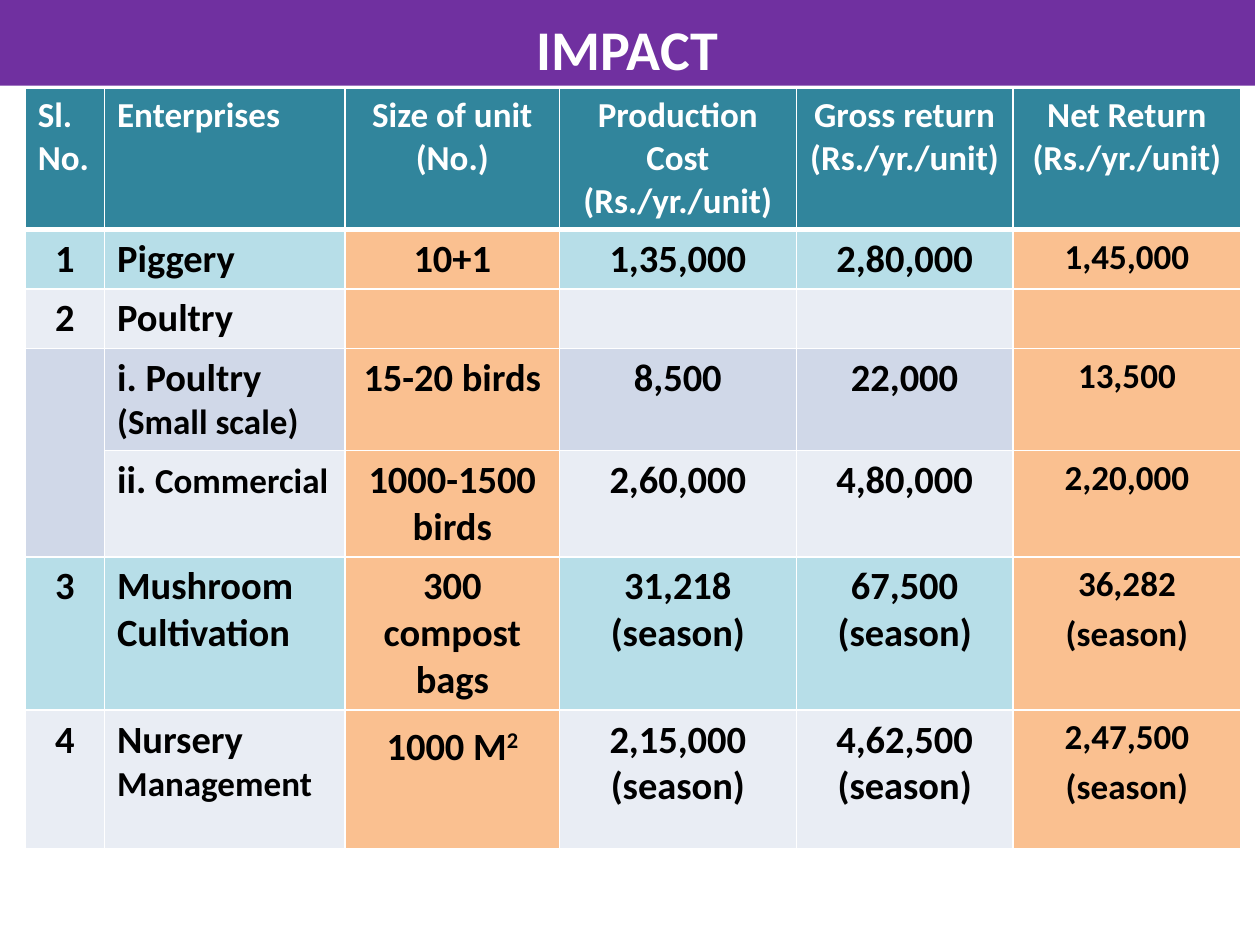
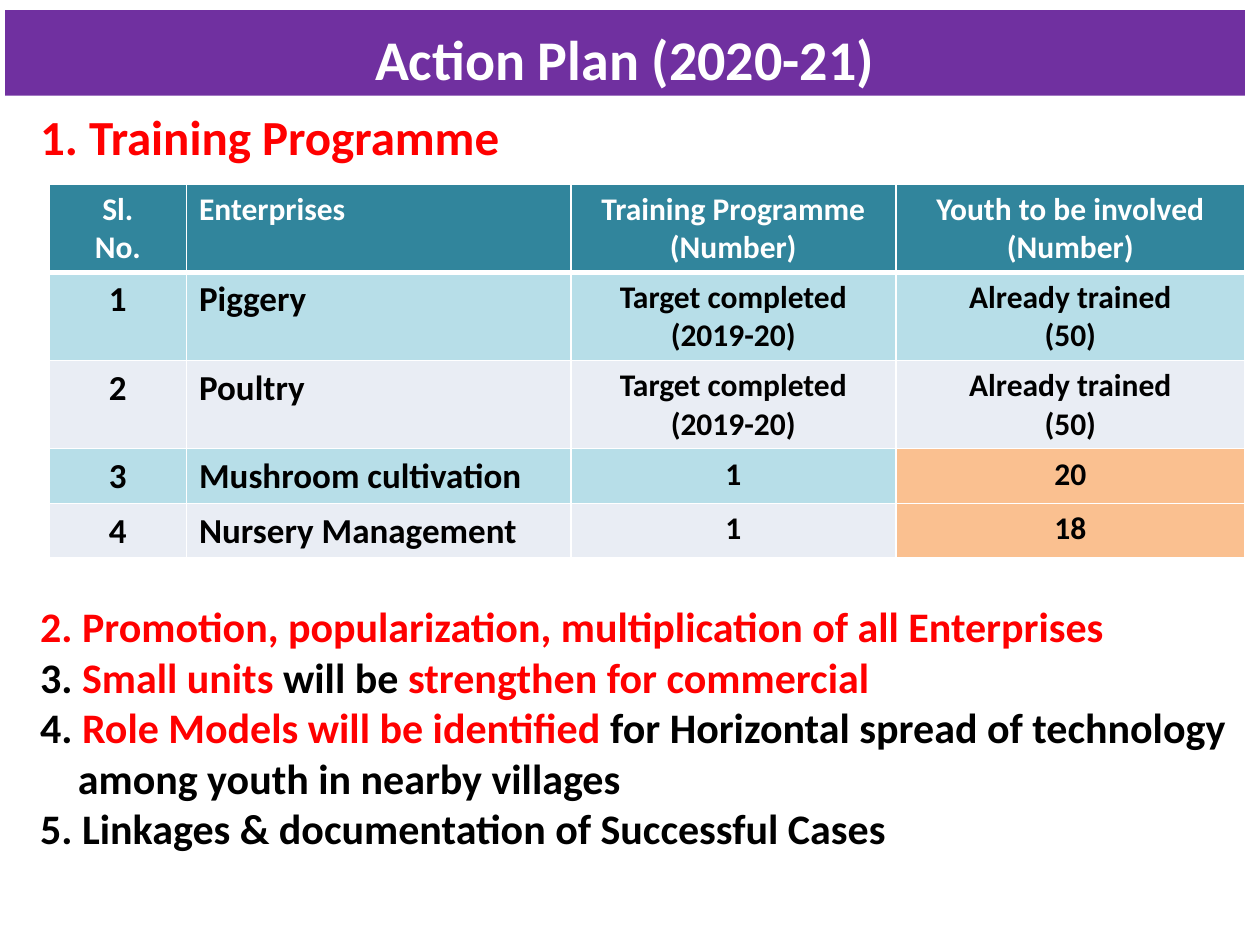
from dataclasses import dataclass
from typing import NamedTuple

from lxml import etree
from pptx import Presentation
from pptx.dml.color import RGBColor
from pptx.enum.shapes import MSO_SHAPE
from pptx.enum.text import MSO_AUTO_SIZE, PP_ALIGN
from pptx.oxml.ns import qn
from pptx.util import Inches, Pt

RECTANGLE = MSO_SHAPE.RECTANGLE
LEFT, CENTER = PP_ALIGN.LEFT, PP_ALIGN.CENTER
GROW = MSO_AUTO_SIZE.SHAPE_TO_FIT_TEXT
GRID_COLUMNS, GRID_ROWS = 100, 75
UNIT = 0.1  # inches per grid step, the same across and down


@dataclass(frozen=True)
class Theme:
    font: str = "Calibri"
    white: str = "FFFFFF"
    black: str = "000000"
    red: str = "FF0000"
    purple: str = "7030A0"
    teal: str = "31859C"
    aqua: str = "B7DEE8"
    pale: str = "E9EDF4"
    mist: str = "D0D8E8"
    orange: str = "FAC090"
    title: int = 32
    heading: int = 28
    points: int = 24
    large: int = 22
    medium: int = 20
    small: int = 18
    loose: float = 1.15
    thin: int = 1
    thick: int = 3


THEME = Theme()


class Area(NamedTuple):
    """Left, top, width and height in grid steps."""
    left: float
    top: float
    width: float
    height: float


class Span(NamedTuple):
    text: str
    size: int | None = None
    color: str | None = None
    raised: bool = False


class RichCell(NamedTuple):
    spans: list[Span]
    spacing: float | None = None


@dataclass(frozen=True)
class Column:
    width: float
    header: str
    size: int
    align: PP_ALIGN = CENTER
    header_align: PP_ALIGN = CENTER
    spacing: float | None = None
    margins: tuple[float, float] = (1, 0.5)
    accent_from: int | None = None


@dataclass(frozen=True)
class Row:
    height: float
    fill: str
    cells: list[str | RichCell]


class Point(NamedTuple):
    spans: list[Span]
    continues: bool = False


def steps(value: float) -> int:
    return Inches(value * UNIT)


def place(area: Area) -> list[int]:
    return [steps(value) for value in area]


def write_line(para, text: str | list[Span], *, size: int, color: str,
               align=LEFT, spacing: float | None = None,
               hanging: tuple[float, float] | None = None) -> None:
    """Write one paragraph; hanging is its left margin and first-line shift."""
    para.alignment = align
    if spacing:
        para.line_spacing = spacing
    if hanging:
        properties = para._p.get_or_add_pPr()
        for name, value in zip(("marL", "indent"), hanging):
            properties.set(name, str(steps(value)))
    for part in [Span(text)] if isinstance(text, str) else text:
        span = para.add_run()
        span.text = part.text
        span.font.name = THEME.font
        span.font.bold = True
        span.font.size = Pt(part.size or size)
        span.font.color.rgb = RGBColor.from_string(part.color or color)
        if part.raised:
            span._r.get_or_add_rPr().set("baseline", "30000")


def next_para(frame, index: int):
    return frame.add_paragraph() if index else frame.paragraphs[0]


def add_banner(page, area: Area, title: str) -> None:
    box = page.shapes.add_shape(RECTANGLE, *place(area))
    box.shadow.inherit = False
    box.fill.solid()
    box.fill.fore_color.rgb = RGBColor.from_string(THEME.purple)
    box.line.fill.background()
    box.text_frame.word_wrap = True
    box.text_frame.auto_size = GROW
    write_line(box.text_frame.paragraphs[0], title, size=THEME.title,
               color=THEME.white, align=CENTER, spacing=THEME.loose)


def add_points(page, area: Area, points: list[Point], size: int) -> None:
    box = page.shapes.add_textbox(*place(area))
    frame = box.text_frame
    frame.word_wrap = True
    frame.auto_size = GROW
    for index, point in enumerate(points):
        hanging = (11.3, -2.6) if point.continues else (11.3, -5.6)
        write_line(next_para(frame, index), point.spans, size=size,
                   color=THEME.black, hanging=hanging)


def draw_borders(cell, bottom: int) -> None:
    properties = cell._tc.get_or_add_tcPr()
    for side, width in zip("LRTB", (THEME.thin,) * 3 + (bottom,)):
        line = etree.SubElement(properties, qn(f"a:ln{side}"), w=str(Pt(width)))
        fill = etree.SubElement(line, qn("a:solidFill"))
        etree.SubElement(fill, qn("a:srgbClr"), val=THEME.white)


def paint_cell(cell, fill: str, bottom: int = THEME.thin) -> None:
    draw_borders(cell, bottom)
    cell.fill.solid()
    cell.fill.fore_color.rgb = RGBColor.from_string(fill)


def fill_cell(cell, content: str | RichCell, column: Column) -> None:
    across, down = map(steps, column.margins)
    cell.margin_left = cell.margin_right = across
    cell.margin_top = cell.margin_bottom = down
    if isinstance(content, RichCell):
        lines, spacing = [content.spans], content.spacing
    else:
        lines, spacing = content.split("\n"), column.spacing
    for index, line in enumerate(lines):
        if line:
            write_line(next_para(cell.text_frame, index), line,
                       size=column.size, color=THEME.black,
                       align=column.align, spacing=spacing)


def add_grid(page, area: Area, columns: list[Column], rows: list[Row],
             header_height: float, header_size: int):
    holder = page.shapes.add_table(len(rows) + 1, len(columns), *place(area))
    table = holder.table
    table.first_row = table.horz_banding = False
    table.rows[0].height = steps(header_height)
    for across, column in enumerate(columns):
        table.columns[across].width = steps(column.width)
        cell = table.cell(0, across)
        paint_cell(cell, THEME.teal, THEME.thick)
        for index, line in enumerate(column.header.split("\n")):
            write_line(next_para(cell.text_frame, index), line,
                       size=header_size, color=THEME.white,
                       align=column.header_align)
    for down, row in enumerate(rows, start=1):
        table.rows[down].height = steps(row.height)
        for across, (column, content) in enumerate(zip(columns, row.cells)):
            accented = column.accent_from and down >= column.accent_from
            cell = table.cell(down, across)
            paint_cell(cell, THEME.orange if accented else row.fill)
            fill_cell(cell, content, column)
    holder.height = steps(area.height)
    return table


def build_impact(page) -> None:
    large, medium = THEME.large, THEME.medium
    columns = [
        Column(6.3, "Sl.\nNo.", large, header_align=LEFT),
        Column(19.1, "Enterprises", large, LEFT, LEFT),
        Column(17, "Size of unit (No.)", large, accent_from=1),
        Column(18.8, "Production Cost (Rs./yr./unit)", large),
        Column(17.2, "Gross return (Rs./yr./unit)", large),
        Column(18.1, "Net Return (Rs./yr./unit)", medium,
               spacing=THEME.loose, margins=(0.7, 0), accent_from=1),
    ]
    small_scale = RichCell([Span("i. Poultry "), Span("(Small scale)", medium)])
    commercial = RichCell([Span("ii. "), Span("Commercial", medium)])
    nursery = RichCell([Span("Nursery "), Span("Management", medium)])
    nursery_size = RichCell([Span("1000 M"), Span("2", raised=True)], THEME.loose)
    rows = [
        Row(4.3, THEME.aqua,
            ["1", "Piggery", "10+1", "1,35,000", "2,80,000", "1,45,000"]),
        Row(4.3, THEME.pale, ["2", "Poultry", "", "", "", ""]),
        Row(7.3, THEME.mist,
            ["", small_scale, "15-20 birds", "8,500", "22,000", "13,500"]),
        Row(7.6, THEME.pale,
            ["", commercial, "1000-1500 birds", "2,60,000", "4,80,000", "2,20,000"]),
        Row(11, THEME.aqua,
            ["3", "Mushroom Cultivation", "300\ncompost bags",
             "31,218\n(season)", "67,500\n(season)", "36,282\n(season)"]),
        Row(11, THEME.pale,
            ["4", nursery, nursery_size,
             "2,15,000\n(season)", "4,62,500\n(season)", "2,47,500\n(season)"]),
    ]
    table = add_grid(page, Area(2, 7, 96.5, 59.6), columns, rows, 10.1, medium)
    table.cell(3, 0).merge(table.cell(4, 0))
    add_banner(page, Area(0, 0, 99.6, 6.8), "IMPACT")


def build_action_plan(page) -> None:
    medium, small, red = THEME.medium, THEME.small, THEME.red
    columns = [
        Column(10.9, "Sl.\nNo.", medium),
        Column(30.5, "Enterprises", medium, LEFT, LEFT),
        Column(25.8, "Training Programme\n(Number)", small),
        Column(27.7, "Youth to be involved\n(Number)", small, accent_from=3),
    ]
    done = ["Target completed\n(2019-20)", "Already trained\n(50)"]
    rows = [
        Row(4.1, THEME.aqua, ["1", "Piggery", *done]),
        Row(2, THEME.pale, ["2", "Poultry", *done]),
        Row(4.1, THEME.aqua, ["3", "Mushroom cultivation", "1", "20"]),
        Row(4.1, THEME.pale, ["4", "Nursery Management", "1", "18"]),
    ]
    add_grid(page, Area(3.9, 14.6, 94.9, 29.7), columns, rows, 4.1, small)
    add_banner(page, Area(0.4, 0.8, 98.4, 6.8), "Action Plan (2020-21)")
    plans = [
        Point([Span("2. Promotion, popularization, multiplication of all Enterprises",
                    color=red)]),
        Point([Span("3. "), Span("Small units ", color=red), Span("will be "),
               Span("strengthen for commercial", color=red)]),
        Point([Span("4. "), Span("Role Models will be identified", color=red),
               Span(" for Horizontal spread of technology")]),
        Point([Span("among youth in nearby villages")], continues=True),
        Point([Span("5. Linkages & documentation of Successful Cases")]),
    ]
    add_points(page, Area(-3.5, 47.2, 102.4, 21.2), plans, THEME.points)
    heading = Point([Span("1. Training Programme", color=red)])
    add_points(page, Area(-3.5, 8, 46.5, 5.7), [heading], THEME.heading)


def main() -> None:
    deck = Presentation()
    deck.slide_width = steps(GRID_COLUMNS)
    deck.slide_height = steps(GRID_ROWS)
    blank = deck.slide_layouts[6]
    for build in (build_impact, build_action_plan):
        build(deck.slides.add_slide(blank))
    deck.save("out.pptx")


if __name__ == "__main__":
    main()
